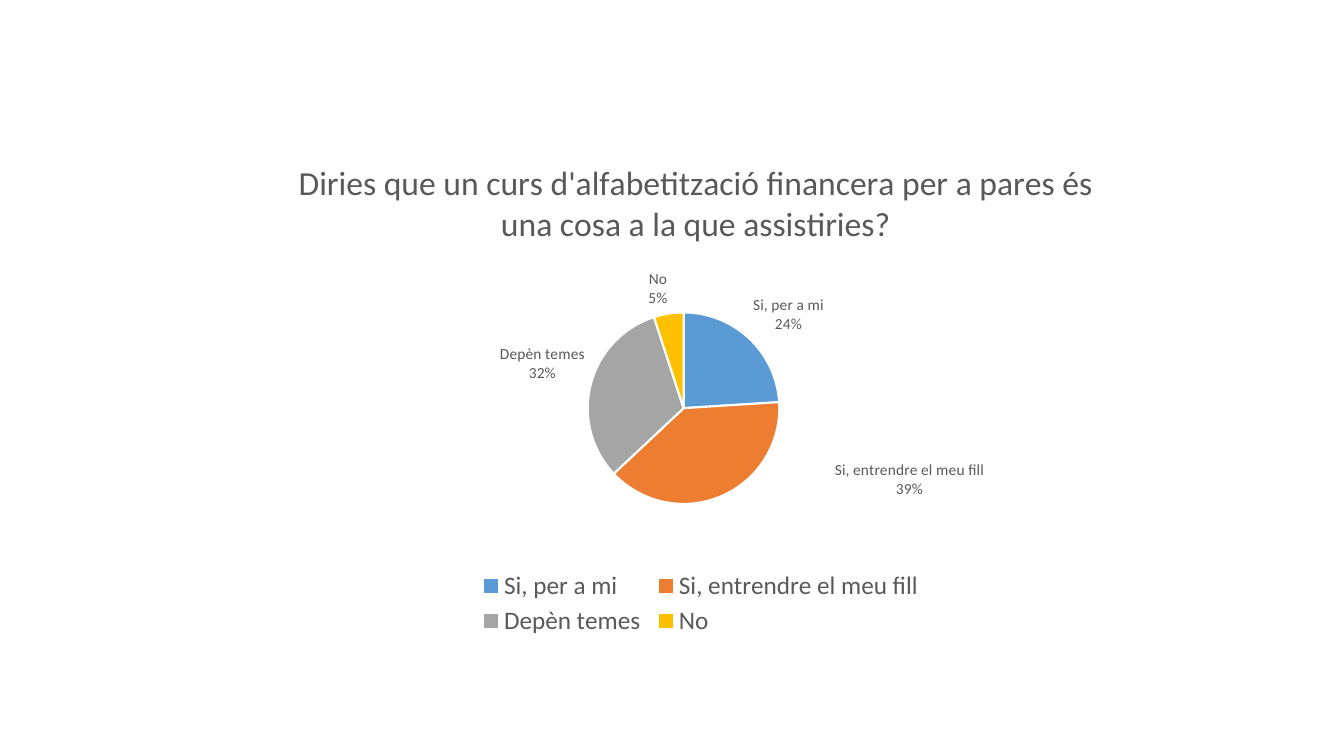
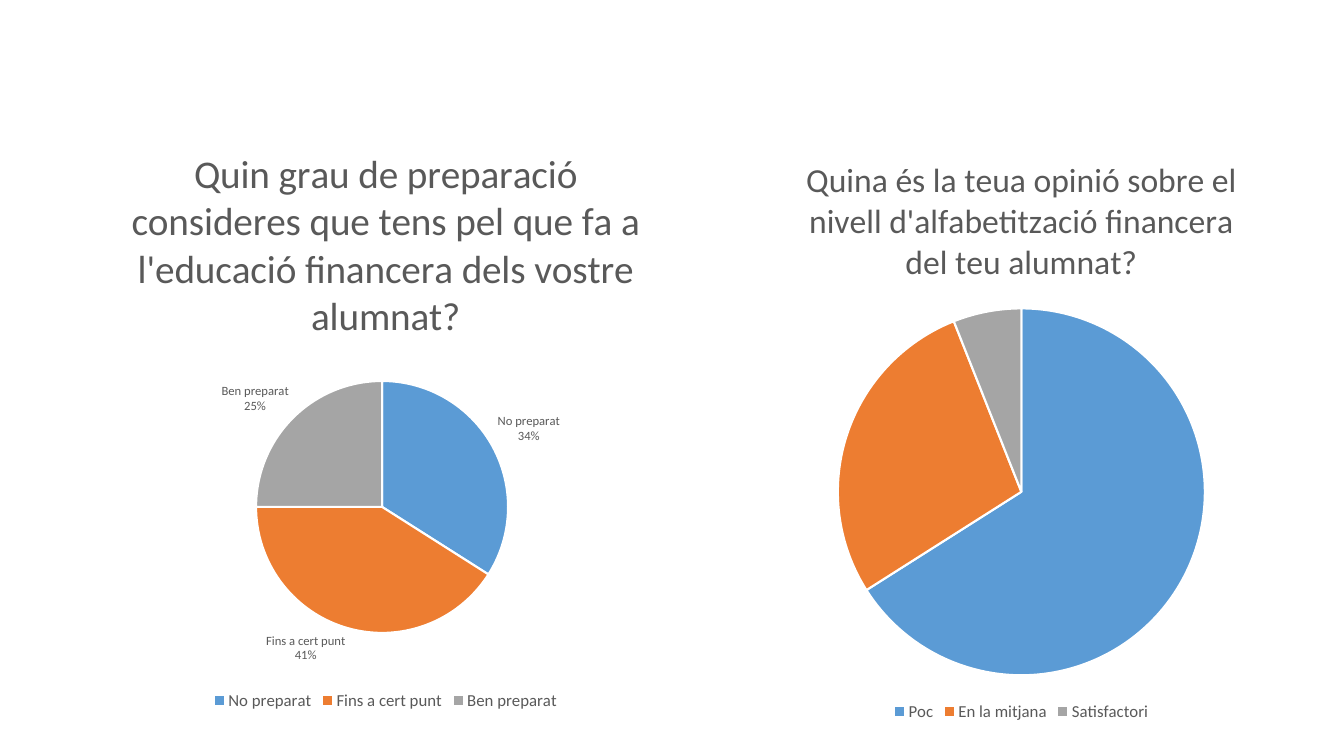
from dataclasses import dataclass

from lxml import etree
from pptx import Presentation
from pptx.chart.data import CategoryChartData
from pptx.dml.color import RGBColor
from pptx.enum.chart import XL_CHART_TYPE, XL_LABEL_POSITION, XL_LEGEND_POSITION
from pptx.oxml.ns import qn
from pptx.util import Inches, Pt

PIE = XL_CHART_TYPE.PIE
BOTTOM = XL_LEGEND_POSITION.BOTTOM
OUTSIDE_END = XL_LABEL_POSITION.OUTSIDE_END


@dataclass(frozen=True)
class Theme:
    font: str = "Calibri"
    text: str = "595959"
    border: str = "FFFFFF"
    slices: tuple = ("5B9BD5", "ED7D31", "A5A5A5", "FFC000")
    base_size: int = 10
    title_size: int = 24
    big_title_size: int = 28
    legend_size: int = 12
    big_legend_size: int = 18
    label_size: int = 9
    big_label_size: int = 11
    border_width: float = 1.5


def add_layout(before, **values):
    parent = before.getparent()
    for old in parent.findall(qn("c:layout")):
        parent.remove(old)
    layout = etree.Element(qn("c:layout"))
    manual = etree.SubElement(layout, qn("c:manualLayout"))
    for tag, value in values.items():
        etree.SubElement(manual, qn(f"c:{tag}")).set("val", str(value))
    before.addnext(layout)


def show_category_and_percent(labels):
    shown = ("showCatName", "showPercent")
    for tag in ("showLegendKey", "showVal", "showSerName", "showBubbleSize") + shown:
        labels.find(qn(f"c:{tag}")).set("val", str(int(tag in shown)))
    separator = etree.Element(qn("c:separator"))
    separator.text = "\n"
    labels.find(qn("c:showBubbleSize")).addnext(separator)
    leader = labels.find(qn("c:showLeaderLines"))
    if leader is not None:
        leader.set("val", "0")


class Deck:
    def __init__(self, theme):
        self.theme = theme
        self.prs = Presentation()
        self.prs.slide_width = Inches(13.33)
        self.prs.slide_height = Inches(7.5)
        self.s = None

    def new_slide(self):
        self.s = self.prs.slides.add_slide(self.prs.slide_layouts[6])

    def style(self, font, size):
        font.name = self.theme.font
        font.size = Pt(size)
        font.bold = False
        font.color.rgb = RGBColor.from_string(self.theme.text)

    def pie(self, box, title, values, center, radius, title_size, legend_size):
        data = CategoryChartData()
        data.categories = list(values)
        data.add_series("Series 1", list(values.values()))
        frame = self.s.shapes.add_chart(PIE, *map(Inches, box), data)
        chart = frame.chart
        self.style(chart.font, self.theme.base_size)
        chart.has_title = True
        p = chart.chart_title.text_frame.paragraphs[0]
        p.text = title
        self.style(p.font, title_size)
        chart.chart_title.include_in_layout = False
        chart.has_legend = True
        chart.legend.position = BOTTOM
        chart.legend.include_in_layout = False
        self.style(chart.legend.font, legend_size)
        chart.plots[0].vary_by_categories = True
        for i, color in enumerate(self.theme.slices[:len(values)]):
            fmt = chart.plots[0].series[0].points[i].format
            fmt.fill.solid()
            fmt.fill.fore_color.rgb = RGBColor.from_string(color)
            fmt.line.color.rgb = RGBColor.from_string(self.theme.border)
            fmt.line.width = Pt(self.theme.border_width)
        self.place_plot(chart, box, center, radius)
        return chart

    def place_plot(self, chart, box, center, radius):
        left, top, width, height = box
        area = chart.plots[0]._element.getparent()
        anchor = etree.Element(qn("c:layout"))
        area.insert(0, anchor)
        marker = etree.Element("marker")
        area.insert(0, marker)
        add_layout(
            marker, layoutTarget="inner", xMode="edge", yMode="edge",
            x=round((center[0] - radius - left) / width, 4),
            y=round((center[1] - radius - top) / height, 4),
            w=round(2 * radius / width, 4), h=round(2 * radius / height, 4))
        area.remove(marker)

    def labels(self, chart, size):
        labels = chart.plots[0].series[0].data_labels
        self.style(labels.font, size)
        labels.position = OUTSIDE_END
        show_category_and_percent(labels._element)

    def shift_label(self, chart, index, dx, dy, size):
        series = chart.plots[0].series[0]
        label = series.points[index].data_label
        self.style(label.font, size)
        label.position = OUTSIDE_END
        xml = next(d for d in series.data_labels._element.findall(qn("c:dLbl"))
                   if d.find(qn("c:idx")).get("val") == str(index))
        add_layout(xml.find(qn("c:idx")), x=dx, y=dy)
        show_category_and_percent(xml)

    def place_legend(self, chart, x, y, w, h):
        legend = chart.legend._element
        add_layout(legend.find(qn("c:legendPos")), xMode="edge", yMode="edge",
                   x=x, y=y, w=w, h=h)


def main():
    theme = Theme()
    deck = Deck(theme)

    deck.new_slide()
    course = deck.pie(
        (1.9, 1.37, 10, 4.99),
        "Diries que un curs d'alfabetització financera per a pares "
        "és una cosa a la que assistiries?",
        {"Si, per a mi": 24, "Si, entrendre el meu fill": 39,
         "Depèn temes": 32, "No": 5},
        (6.78, 4.05), 0.95, theme.title_size, theme.big_legend_size)
    deck.labels(course, theme.big_label_size)
    deck.shift_label(course, 1, 0.11, -0.08, theme.big_label_size)
    deck.place_legend(course, 0.28, 0.85, 0.45, 0.15)

    deck.new_slide()
    readiness = deck.pie(
        (0.52, 1.22, 6.61, 5.87),
        "Quin grau de preparació consideres que tens pel que fa a "
        "l'educació financera dels vostre alumnat?",
        {"No preparat": 34, "Fins a cert punt": 41, "Ben preparat": 25},
        (3.79, 5.03), 1.25, theme.big_title_size, theme.legend_size)
    deck.labels(readiness, theme.label_size)
    deck.pie(
        (7.14, 1.33, 5.98, 5.87),
        "Quina és la teua opinió sobre el nivell d'alfabetització "
        "financera del teu alumnat?",
        {"Poc": 66, "En la mitjana": 28, "Satisfactori": 6},
        (10.13, 4.88), 1.82, theme.title_size, theme.legend_size)

    deck.prs.save("out.pptx")


if __name__ == "__main__":
    main()
